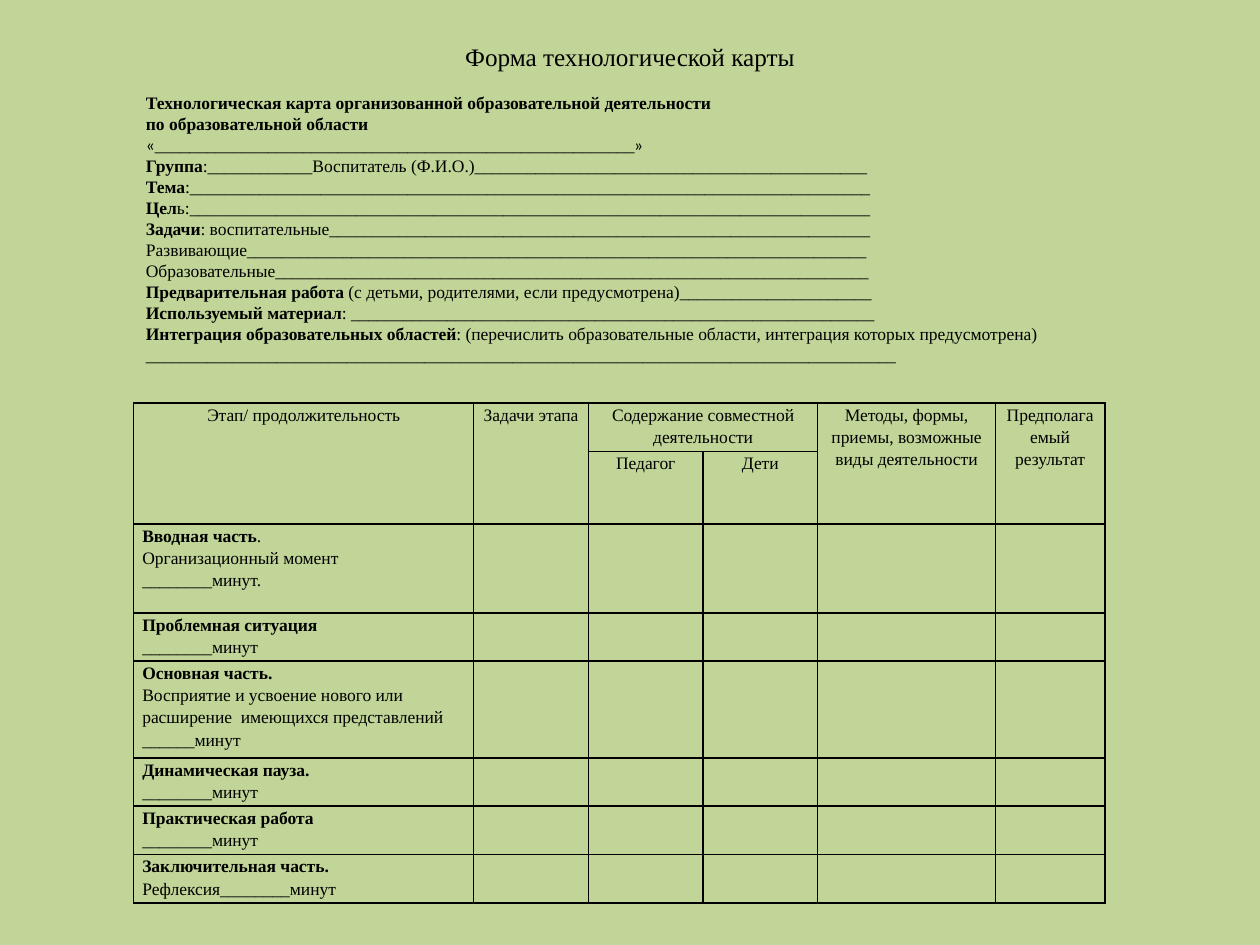
"""Build a slide with a blank lesson-plan form and its stage table."""
import dataclasses

import lxml.etree
import pptx
import pptx.dml.color
import pptx.enum.text
import pptx.oxml.ns
import pptx.util

COLORS = {"page": "C1D598", "ink": "000000"}
ALIGN = pptx.enum.text.PP_ALIGN
ANCHOR = pptx.enum.text.MSO_ANCHOR


@dataclasses.dataclass
class Span:
    text: str
    bold: bool = False
    font: str = "Times New Roman"


def bold(text):
    return Span(text, bold=True)


def blank(count):
    return "_" * count


class Sheet:
    columns, rows = 100, 75
    body_size = 10

    def __init__(self, deck):
        self.deck = deck
        self.page = deck.slides.add_slide(deck.slide_layouts[6])
        self.page.background.fill.solid()
        self.page.background.fill.fore_color.rgb = self.color("page")

    def color(self, name):
        return pptx.dml.color.RGBColor.from_string(COLORS[name])

    def across(self, columns):
        return round(self.deck.slide_width * columns / self.columns)

    def down(self, rows):
        return round(self.deck.slide_height * rows / self.rows)

    def place(self, left, top, width, height):
        return self.across(left), self.down(top), self.across(width), self.down(height)

    def add_paragraphs(self, frame, paragraphs, size=body_size, align=ALIGN.LEFT, spacing=None):
        frame.word_wrap = True
        for index, spans in enumerate(paragraphs):
            para = frame.add_paragraph() if index else frame.paragraphs[0]
            para.alignment = align
            para.line_spacing = spacing
            for item in spans:
                span = item if isinstance(item, Span) else Span(item)
                run = para.add_run()
                run.text = span.text
                run.font.name = span.font
                run.font.size = pptx.util.Pt(size)
                run.font.bold = span.bold
                run.font.color.rgb = self.color("ink")

    def text(self, place, paragraphs, anchor=ANCHOR.TOP, **style):
        box = self.page.shapes.add_textbox(*self.place(*place))
        box.text_frame.vertical_anchor = anchor
        self.add_paragraphs(box.text_frame, paragraphs, **style)

    def border(self, cell):
        properties = cell._tc.get_or_add_tcPr()
        qn = pptx.oxml.ns.qn
        for index, side in enumerate(("lnL", "lnR", "lnT", "lnB")):
            line = lxml.etree.Element(qn(f"a:{side}"), w=str(pptx.util.Pt(1)))
            fill = lxml.etree.SubElement(line, qn("a:solidFill"))
            lxml.etree.SubElement(fill, qn("a:srgbClr"), val=COLORS["ink"])
            properties.insert(index, line)

    def table(self, left, top, widths, heights):
        place = self.place(left, top, sum(widths), sum(heights))
        table = self.page.shapes.add_table(len(heights), len(widths), *place).table
        table.first_row = table.horz_banding = False
        for column, width in zip(table.columns, widths):
            column.width = self.across(width)
        for row, height in zip(table.rows, heights):
            row.height = self.down(height)
        for cell in table.iter_cells():
            cell.fill.background()
            cell.margin_left = cell.margin_right = pptx.util.Inches(0.07)
            cell.margin_top = cell.margin_bottom = 0
            self.border(cell)
            lxml.etree.SubElement(
                cell.text_frame.paragraphs[0]._p,
                pptx.oxml.ns.qn("a:endParaRPr"),
                sz=str(self.body_size * 100),
            )
        return table

    def cell(self, table, row, column, paragraphs, align=ALIGN.LEFT, span=(1, 1)):
        cell = table.cell(row, column)
        if span != (1, 1):
            cell.merge(table.cell(row + span[0] - 1, column + span[1] - 1))
        self.add_paragraphs(cell.text_frame, paragraphs, align=align, spacing=1.15)


FORM = [
    [bold("Технологическая карта организованной образовательной деятельности")],
    [bold("по образовательной области")],
    [Span("«", font="Calibri"), blank(55), Span("»", font="Calibri")],
    [bold("Группа"), f":{blank(12)}Воспитатель (Ф.И.О.){blank(45)}"],
    [bold("Тема"), f":{blank(78)}"],
    [bold("Цел"), f"ь:{blank(78)}"],
    [bold("Задачи"), f": воспитательные{blank(62)}"],
    [f"Развивающие{blank(71)}"],
    [f"Образовательные{blank(68)}"],
    [bold("Предварительная работа"),
     f" (с детьми, родителями, если предусмотрена){blank(22)}"],
    [bold("Используемый материал"), f": {blank(60)}"],
    [bold("Интеграция образовательных областей"),
     ": (перечислить образовательные области, интеграция которых предусмотрена) "
     + blank(86)],
]

HEADERS = [
    (0, 0, "Этап/ продолжительность", (2, 1)),
    (0, 1, "Задачи этапа", (2, 1)),
    (0, 2, "Содержание совместной деятельности", (1, 2)),
    (0, 4, "Методы, формы, приемы, возможные виды деятельности", (2, 1)),
    (0, 5, "Предполагаемый результат", (2, 1)),
    (1, 2, "Педагог", (1, 1)),
    (1, 3, "Дети", (1, 1)),
]

MINUTES = [f"{blank(8)}минут"]
STAGES = [
    [[bold("Вводная часть"), "."], ["Организационный момент"], [f"{blank(8)}минут."]],
    [[bold("Проблемная ситуация")], MINUTES],
    [[bold("Основная часть.")],
     [f"Восприятие и усвоение нового или расширение  имеющихся представлений {blank(6)}минут"]],
    [[bold("Динамическая пауза.")], MINUTES],
    [[bold("Практическая работа")], MINUTES],
    [[bold("Заключительная часть. "), f"Рефлексия{blank(8)}минут"]],
]

COLUMN_WIDTHS = [27, 9.1, 9.1, 9.1, 14.1, 8.7]
ROW_LINES = [2, 3, 4, 2, 4, 2, 2, 2]
LINE_HEIGHT = 1.76


def main():
    deck = pptx.Presentation()
    deck.slide_width = pptx.util.Inches(10)
    deck.slide_height = pptx.util.Inches(7.5)
    sheet = Sheet(deck)
    sheet.text((5, 3, 90, 3), [["Форма технологической карты"]],
               anchor=ANCHOR.MIDDLE, size=14.4, align=ALIGN.CENTER)
    table = sheet.table(10.6, 32, COLUMN_WIDTHS,
                        [lines * LINE_HEIGHT for lines in ROW_LINES])
    for row, column, label, span in HEADERS:
        sheet.cell(table, row, column, [[label]], align=ALIGN.CENTER, span=span)
    for row, stage in enumerate(STAGES, start=2):
        sheet.cell(table, row, 0, stage)
    sheet.text((10.6, 6.8, 77.2, 25.9), FORM)
    deck.save("out.pptx")


if __name__ == "__main__":
    main()
